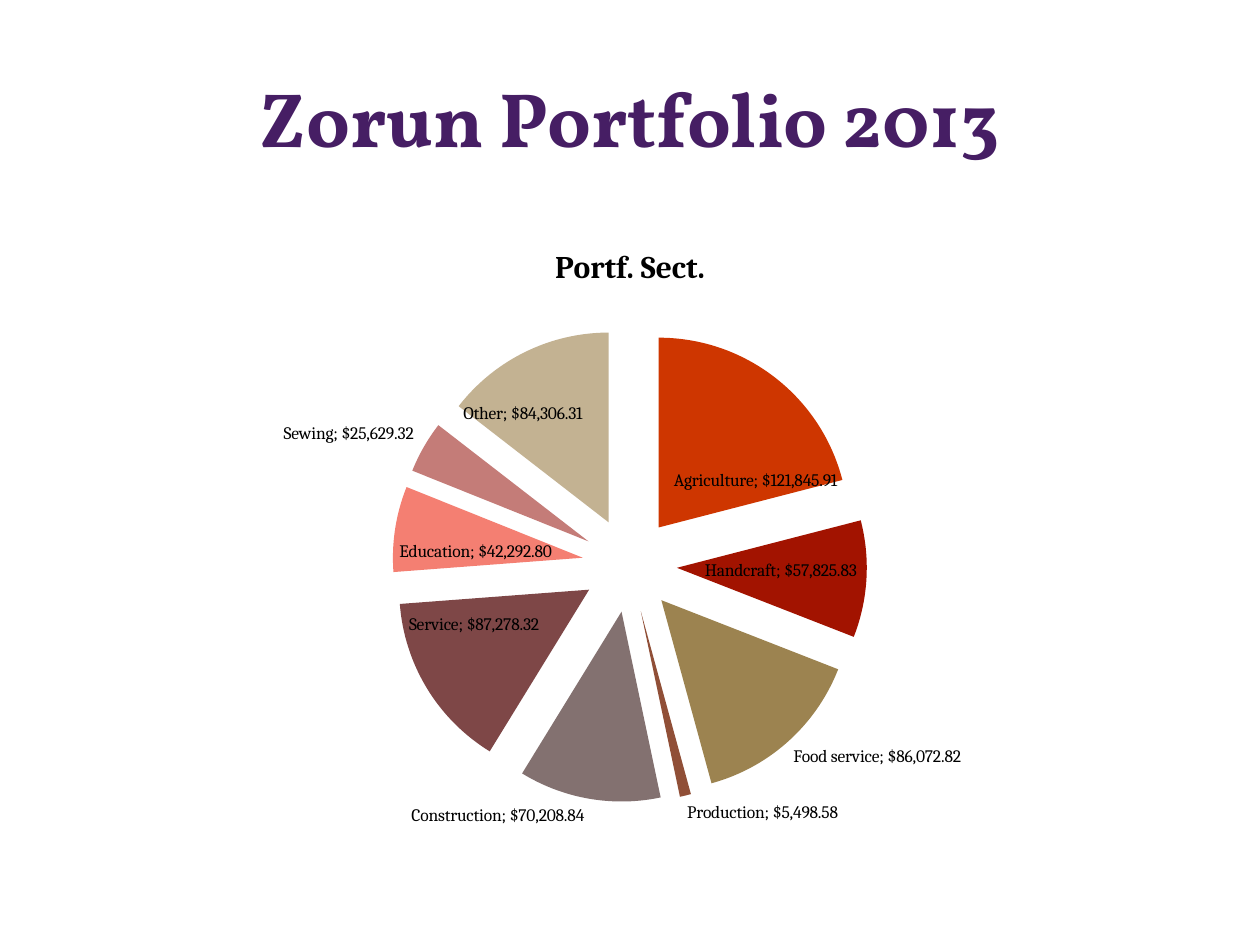
from dataclasses import dataclass

from lxml.etree import SubElement
from pptx import Presentation
from pptx.chart.data import CategoryChartData
from pptx.dml.color import RGBColor
from pptx.enum.chart import XL_CHART_TYPE as ChartType, XL_LABEL_POSITION as LabelPosition
from pptx.enum.text import MSO_ANCHOR as Anchor, PP_ALIGN as Align
from pptx.oxml.ns import qn
from pptx.util import Emu, Pt

EMU_PER_PX = 914400 / 126
CHART_TITLE = "Portf. Sect."
MONEY_FORMAT = '"$"#,##0.00_);[Red]\\("$"#,##0.00\\)'
EXPLOSION = 25
COLORS = {
    "heading": "461E64",
    "text": "000000",
    "orange": "CE3600",
    "red": "A21300",
    "olive": "9C8350",
    "brown": "904F37",
    "gray": "837170",
    "maroon": "7E4747",
    "salmon": "F47F72",
    "rose": "C47C78",
    "sand": "C3B292",
}


@dataclass(frozen=True)
class Sector:
    name: str
    amount: float
    color: str


@dataclass(frozen=True)
class Box:
    left: int
    top: int
    width: int
    height: int

    def emu(self) -> tuple[Emu, ...]:
        return tuple(px(n) for n in (self.left, self.top, self.width, self.height))


SECTORS = [
    Sector("Agriculture", 121845.91, "orange"),
    Sector("Handcraft", 57825.83, "red"),
    Sector("Food service", 86072.82, "olive"),
    Sector("Production", 5498.58, "brown"),
    Sector("Construction", 70208.84, "gray"),
    Sector("Service", 87278.32, "maroon"),
    Sector("Education", 42292.80, "salmon"),
    Sector("Sewing", 25629.32, "rose"),
    Sector("Other", 84306.31, "sand"),
]


def px(length: int) -> Emu:
    return Emu(round(length * EMU_PER_PX))


def style_font(font, family: str, size: int, color: str, bold: bool = False) -> None:
    font.name = family
    font.size = Pt(size)
    font.bold = bold
    font.color.rgb = RGBColor.from_string(COLORS[color])


def add_heading(slide, box: Box, text: str) -> None:
    frame = slide.shapes.add_textbox(*box.emu()).text_frame
    frame.word_wrap = True
    frame.vertical_anchor = Anchor.MIDDLE
    paragraph = frame.paragraphs[0]
    paragraph.alignment = Align.CENTER
    run = paragraph.add_run()
    run.text = text
    style_font(run.font, "Vollkorn", 44, "heading", bold=True)


def explode(series) -> None:
    """Pull all slices apart; the element must precede the points."""
    explosion = SubElement(series._element, qn("c:explosion"), val=str(EXPLOSION))
    series._element.find(qn("c:dPt")).addprevious(explosion)


def label_sectors(plot) -> None:
    plot.has_data_labels = True
    labels = plot.data_labels
    labels.show_category_name = True
    labels.show_value = True
    labels.show_percentage = False
    labels.number_format = MONEY_FORMAT
    labels.number_format_is_linked = False
    labels.position = LabelPosition.BEST_FIT
    style_font(labels.font, "Cambria", 10, "text")
    separator = SubElement(labels._element, qn("c:separator"))
    separator.text = "; "
    labels._element.find(qn("c:showBubbleSize")).addnext(separator)


def add_sector_pie(slide, box: Box, sectors: list[Sector]) -> None:
    data = CategoryChartData(number_format=MONEY_FORMAT)
    data.categories = [sector.name for sector in sectors]
    data.add_series(CHART_TITLE, [sector.amount for sector in sectors])
    chart = slide.shapes.add_chart(ChartType.PIE, *box.emu(), data).chart
    style_font(chart.font, "Cambria", 10, "text")
    chart.has_legend = False
    chart.has_title = True
    title_run = chart.chart_title.text_frame.paragraphs[0].add_run()
    title_run.text = CHART_TITLE
    style_font(title_run.font, "Cambria", 18, "text", bold=True)

    plot = chart.plots[0]
    plot.vary_by_categories = True
    series = plot.series[0]
    for index, sector in enumerate(sectors):
        fill = series.points[index].format.fill
        fill.solid()
        fill.fore_color.rgb = RGBColor.from_string(COLORS[sector.color])
    explode(series)
    label_sectors(plot)


def main() -> None:
    deck = Presentation()
    deck.slide_width, deck.slide_height = px(1260), px(945)
    slide = deck.slides.add_slide(deck.slide_layouts[6])
    add_heading(slide, Box(63, 38, 1134, 157), "Zorun Portfolio 2013")
    add_sector_pie(slide, Box(63, 221, 1134, 624), SECTORS)
    deck.save("out.pptx")


if __name__ == "__main__":
    main()
